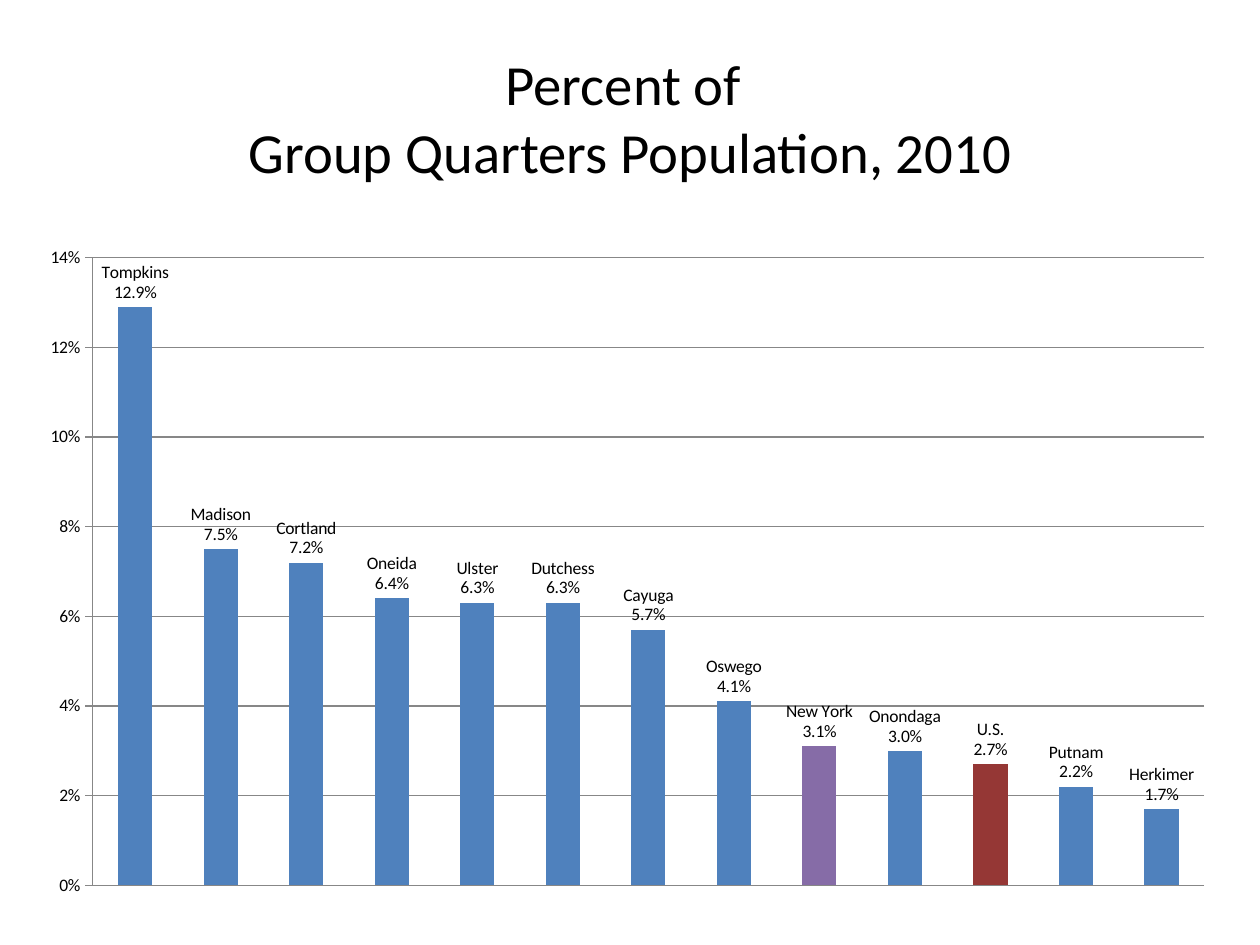
"""Build a slide with a column chart of group quarters population shares."""
from typing import NamedTuple

from lxml.etree import SubElement
from pptx import Presentation
from pptx.chart.data import CategoryChartData
from pptx.dml.color import RGBColor
from pptx.enum.chart import XL_CHART_TYPE as ChartType
from pptx.enum.chart import XL_LABEL_POSITION as LabelPos
from pptx.enum.chart import XL_TICK_MARK as Tick
from pptx.enum.text import MSO_ANCHOR, PP_ALIGN
from pptx.oxml import parse_xml
from pptx.oxml.ns import nsdecls, qn
from pptx.util import Cm, Pt

FONT = "Calibri"
BLACK, GRAY, BLUE, PURPLE, RED = "000000", "878787", "4F81BD", "866CA7", "953735"


class Bar(NamedTuple):
    place: str
    share: float
    color: str = BLUE


BARS = [
    Bar("Tompkins", 0.129),
    Bar("Madison", 0.075),
    Bar("Cortland", 0.072),
    Bar("Oneida", 0.064),
    Bar("Ulster", 0.063),
    Bar("Dutchess", 0.063),
    Bar("Cayuga", 0.057),
    Bar("Oswego", 0.041),
    Bar("New York", 0.031, PURPLE),
    Bar("Onondaga", 0.03),
    Bar("U.S.", 0.027, RED),
    Bar("Putnam", 0.022),
    Bar("Herkimer", 0.017),
]


def rgb(color: str) -> RGBColor:
    return RGBColor.from_string(color)


def set_font(font, size: float, color: str = BLACK) -> None:
    font.name, font.size, font.bold = FONT, Pt(size), False
    font.color.rgb = rgb(color)


def add_text(s, text: str, box: tuple, *, size: float, align=PP_ALIGN.CENTER) -> None:
    tf = s.shapes.add_textbox(*box).text_frame
    tf.word_wrap = True
    tf.vertical_anchor = MSO_ANCHOR.MIDDLE
    p = tf.paragraphs[0]
    p.alignment = align
    for i, line in enumerate(text.split("\n")):
        if i:
            p.add_line_break()
        r = p.add_run()
        r.text = line
        set_font(r.font, size)


def set_plot_area(chart, x: float, y: float, w: float, h: float) -> None:
    plot_area = chart._chartSpace.chart.plotArea
    for old in plot_area.findall(qn("c:layout")):
        plot_area.remove(old)
    parts = {"layoutTarget": "inner", "xMode": "edge", "yMode": "edge",
             "x": x, "y": y, "w": w, "h": h}
    items = "".join(f'<c:{tag} val="{val}"/>' for tag, val in parts.items())
    plot_area.insert(0, parse_xml(
        f'<c:layout {nsdecls("c")}><c:manualLayout>{items}</c:manualLayout></c:layout>'))


def style_axes(chart) -> None:
    chart.category_axis.visible = False
    axis = chart.value_axis
    axis.minimum_scale, axis.maximum_scale, axis.major_unit = 0, 0.14, 0.02
    axis.major_tick_mark, axis.minor_tick_mark = Tick.OUTSIDE, Tick.NONE
    axis.tick_labels.number_format = "0%"
    axis.tick_labels.number_format_is_linked = False
    set_font(axis.tick_labels.font, 10)
    for line in (axis.format.line, axis.major_gridlines.format.line):
        line.color.rgb = rgb(GRAY)
        line.width = Pt(0.75)


def add_bars(s, bars: list[Bar], box: tuple) -> None:
    data = CategoryChartData(number_format="0.0%")
    data.categories = [bar.place for bar in bars]
    data.add_series("Series 1", [bar.share for bar in bars])
    chart = s.shapes.add_chart(ChartType.COLUMN_CLUSTERED, *box, data).chart
    chart.has_title = chart.has_legend = False
    set_font(chart.font, 10)
    style_axes(chart)
    set_plot_area(chart, 0.05, 0.04, 0.93, 0.93)

    plot = chart.plots[0]
    plot.gap_width, plot.vary_by_categories = 150, False
    series = plot.series[0]
    series.format.fill.solid()
    series.format.fill.fore_color.rgb = rgb(BLUE)
    for i, bar in enumerate(bars):
        if bar.color != BLUE:
            fill = series.points[i].format.fill
            fill.solid()
            fill.fore_color.rgb = rgb(bar.color)

    labels = series.data_labels
    labels.show_value = labels.show_category_name = True
    labels.number_format, labels.number_format_is_linked = "0.0%", False
    labels.position = LabelPos.OUTSIDE_END
    set_font(labels.font, 10)
    separator = SubElement(labels._element, qn("c:separator"))
    separator.text = "\n"
    labels._element.find(qn("c:showBubbleSize")).addnext(separator)


def main() -> None:
    prs = Presentation()
    prs.slide_width, prs.slide_height = Cm(25.4), Cm(19.05)
    s = prs.slides.add_slide(prs.slide_layouts[6])
    add_text(s, "Percent of \nGroup Quarters Population, 2010",
             (Cm(1.27), Cm(0.76), Cm(22.86), Cm(3.18)), size=32.4)
    add_bars(s, BARS, (Cm(0.66), Cm(4.65), Cm(24.1), Cm(13.61)))
    prs.save("out.pptx")


if __name__ == "__main__":
    main()
